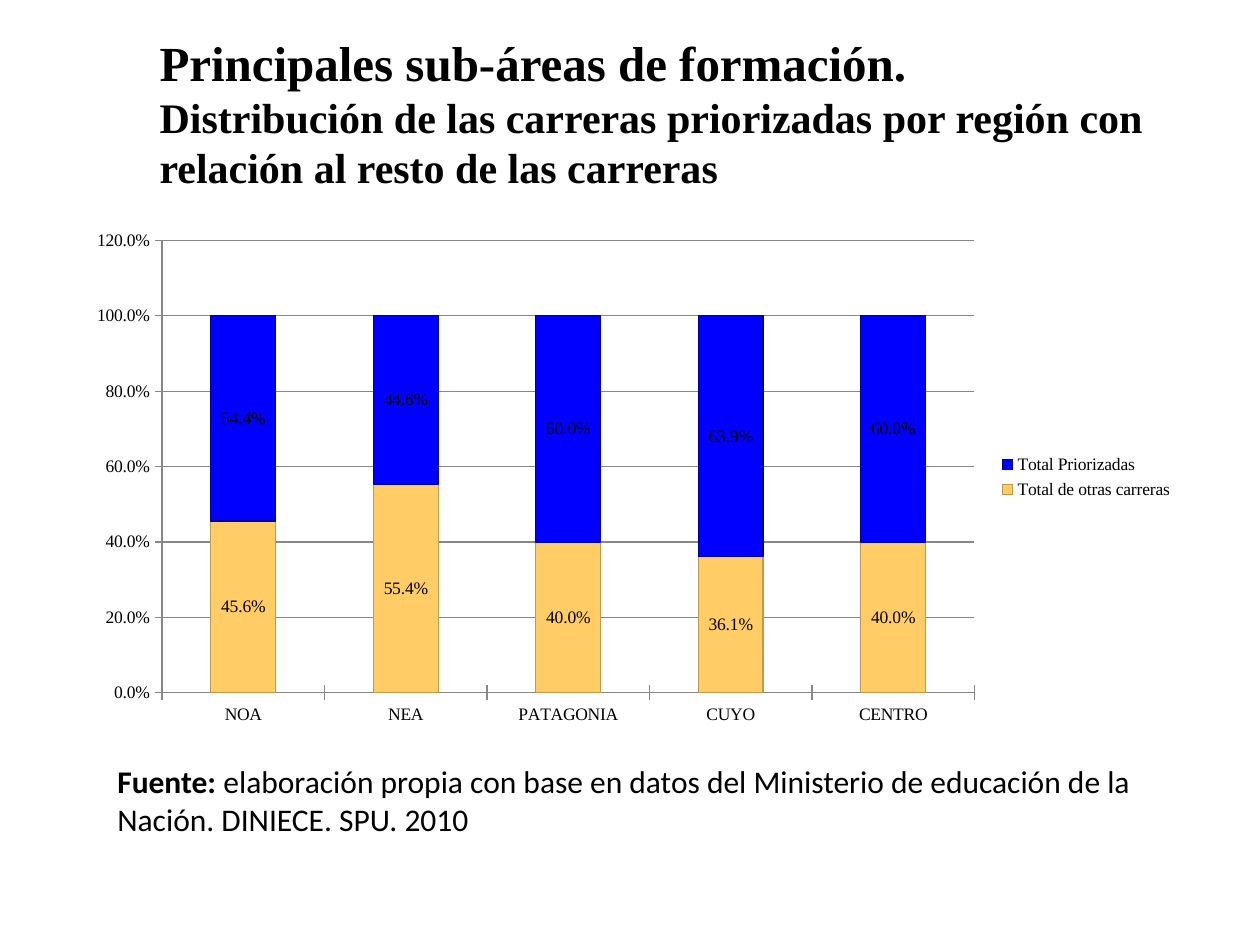
from dataclasses import dataclass

from lxml.etree import SubElement
from pptx import Presentation
from pptx.chart.data import CategoryChartData
from pptx.dml.color import RGBColor
from pptx.enum.chart import (XL_CHART_TYPE, XL_LABEL_POSITION,
                             XL_LEGEND_POSITION, XL_TICK_MARK)
from pptx.enum.text import MSO_ANCHOR, PP_ALIGN
from pptx.oxml.ns import qn
from pptx.util import Emu, Pt

PX = 914400 / 126  # EMU per pixel


@dataclass(frozen=True)
class Theme:
    serif: str = "Times New Roman"
    sans: str = "Calibri"
    text: str = "000000"
    grid: str = "878787"
    others: str = "FFCC66"
    others_line: str = "BF994D"
    priority: str = "0000FF"
    priority_line: str = "000099"
    title: int = 28
    subtitle: int = 24
    source: int = 18
    chart: int = 10


T = Theme()
REGIONS = ["NOA", "NEA", "PATAGONIA", "CUYO", "CENTRO"]
SERIES = [
    ("Total de otras carreras", [0.456, 0.554, 0.4, 0.361, 0.4]),
    ("Total Priorizadas", [0.544, 0.446, 0.6, 0.639, 0.6]),
]


def box(*lengths):
    return [Emu(round(n * PX)) for n in lengths]


def set_font(font, size, name, bold=False):
    font.size, font.name, font.bold = Pt(size), name, bold
    font.color.rgb = RGBColor.from_string(T.text)


def add_run(p, text, size, name, bold=False):
    r = p.add_run()
    r.text = text
    set_font(r.font, size, name, bold)


def add_title(s, area):
    sp = s.shapes.title
    sp.left, sp.top, sp.width, sp.height = box(*area)
    tf = sp.text_frame
    tf.word_wrap = True
    tf.vertical_anchor = MSO_ANCHOR.TOP
    p = tf.paragraphs[0]
    p.alignment = PP_ALIGN.LEFT
    add_run(p, "Principales sub-áreas de formación.", T.title, T.serif, bold=True)
    p.add_line_break()
    add_run(p, "Distribución de las carreras priorizadas por región con "
            "relación al resto de las carreras", T.subtitle, T.serif, bold=True)


def add_source(s, area):
    tf = s.shapes.add_textbox(*box(*area)).text_frame
    tf.word_wrap = True
    p = tf.paragraphs[0]
    add_run(p, "Fuente: ", T.source, T.sans, bold=True)
    add_run(p, "elaboración propia con base en datos del Ministerio de "
            "educación de la Nación. DINIECE. SPU. 2010", T.source, T.sans)


def set_plot_area(chart, x, y, w, h):
    """Fix the inner plot area, as fractions of the chart."""
    area = chart.element.find(".//" + qn("c:plotArea"))
    for old in area.findall(qn("c:layout")):
        area.remove(old)
    layout = SubElement(area, qn("c:layout"))
    area.insert(0, layout)
    manual = SubElement(layout, qn("c:manualLayout"))
    settings = {"layoutTarget": "inner", "xMode": "edge", "yMode": "edge",
                "x": x, "y": y, "w": w, "h": h}
    for tag, value in settings.items():
        SubElement(manual, qn("c:" + tag)).set("val", str(value))


def style_axis(axis):
    axis.major_tick_mark = XL_TICK_MARK.CROSS
    axis.minor_tick_mark = XL_TICK_MARK.NONE
    axis.format.line.color.rgb = RGBColor.from_string(T.grid)
    set_font(axis.tick_labels.font, T.chart, T.serif)


def style_series(series, fill, line):
    series.format.fill.solid()
    series.format.fill.fore_color.rgb = RGBColor.from_string(fill)
    series.format.line.color.rgb = RGBColor.from_string(line)
    series.format.line.width = Pt(0.75)


def add_chart(s, area):
    data = CategoryChartData(number_format="0.0%")
    data.categories = REGIONS
    for name, values in SERIES:
        data.add_series(name, values)
    chart = s.shapes.add_chart(XL_CHART_TYPE.COLUMN_STACKED, *box(*area), data).chart
    set_font(chart.font, T.chart, T.serif)
    chart.has_title = False
    set_plot_area(chart, 0.08, 0.04, 0.73, 0.88)

    # Axes and legend
    style_axis(chart.category_axis)
    axis = chart.value_axis
    style_axis(axis)
    axis.minimum_scale, axis.maximum_scale, axis.major_unit = 0, 1.2, 0.2
    axis.tick_labels.number_format = "0.0%"
    axis.tick_labels.number_format_is_linked = False
    axis.has_major_gridlines = True
    axis.major_gridlines.format.line.color.rgb = RGBColor.from_string(T.grid)
    chart.has_legend = True
    chart.legend.position = XL_LEGEND_POSITION.RIGHT
    chart.legend.include_in_layout = False
    set_font(chart.legend.font, T.chart, T.serif)

    # Columns and their labels
    plot = chart.plots[0]
    plot.gap_width, plot.overlap, plot.vary_by_categories = 150, 100, False
    others, priority = plot.series
    style_series(others, T.others, T.others_line)
    style_series(priority, T.priority, T.priority_line)
    labels = others.data_labels
    labels.show_value = True
    labels.number_format = "0.0%"
    labels.number_format_is_linked = False
    set_font(labels.font, T.chart, T.serif)
    for i in range(len(REGIONS)):
        priority.points[i].data_label.position = XL_LABEL_POSITION.CENTER


def main():
    prs = Presentation()
    prs.slide_width, prs.slide_height = box(1260, 945)
    s = prs.slides.add_slide(prs.slide_layouts[5])
    add_title(s, (147, 26, 1113, 174))
    add_source(s, (105, 756, 1061, 89))
    add_chart(s, (73, 220, 1113, 514))
    prs.save("out.pptx")


if __name__ == "__main__":
    main()
